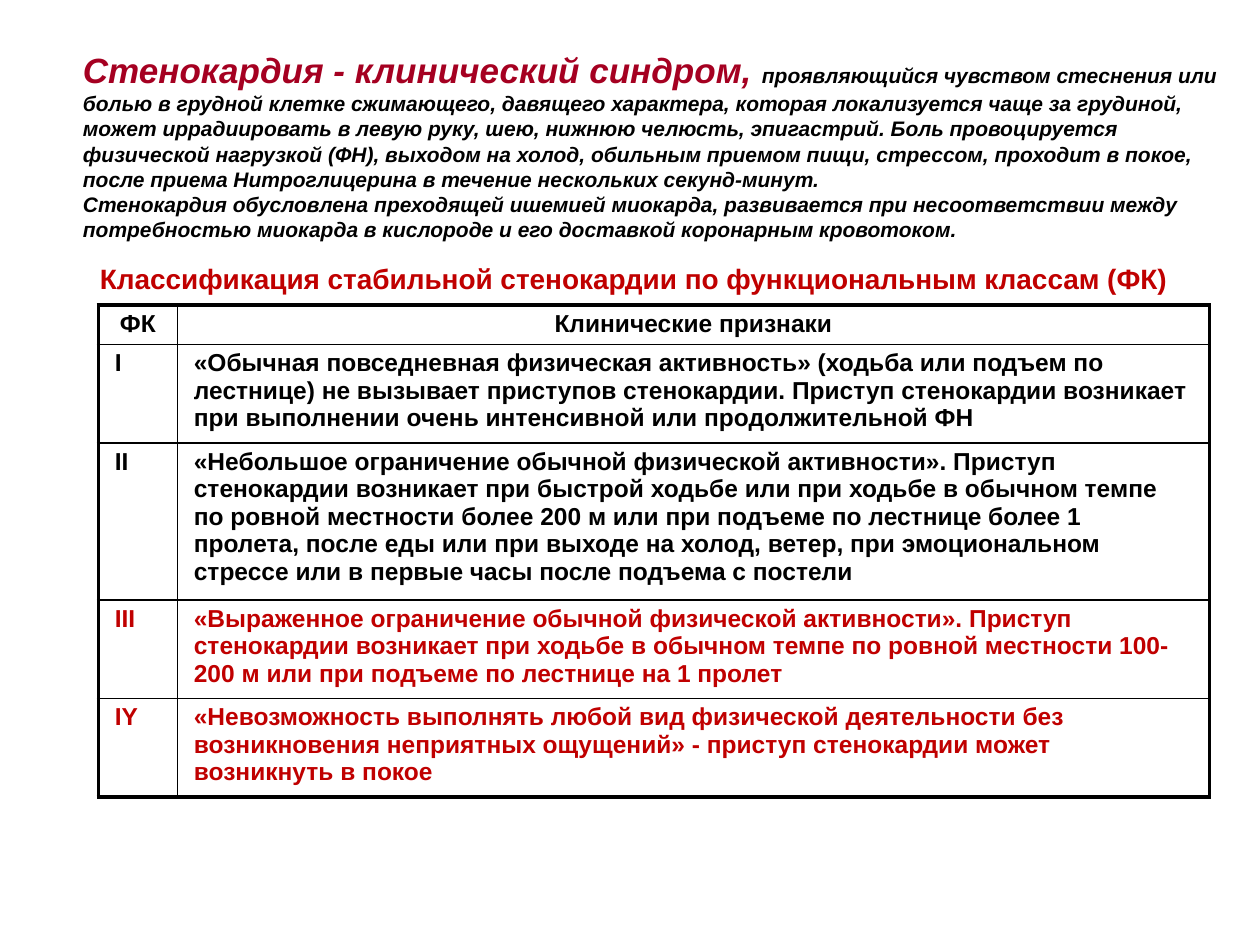
from dataclasses import dataclass

from lxml.etree import SubElement
from pptx import Presentation
from pptx.dml.color import RGBColor
from pptx.enum.text import MSO_ANCHOR as ANCHOR, PP_ALIGN as ALIGN
from pptx.oxml.ns import qn
from pptx.util import Pt

BLACK, RED, CRIMSON, WHITE = "000000", "C00000", "A50021", "FFFFFF"


@dataclass
class Row:
    """One row of the classification table."""
    label: str
    signs: str
    height: float
    color: str = BLACK
    align: ALIGN = ALIGN.LEFT


ROWS = [
    Row("ФК", "Клинические признаки", 22.3, align=ALIGN.CENTER),
    Row("I", "«Обычная повседневная физическая активность» (ходьба или подъем по лестнице) "
        "не вызывает приступов стенокардии. Приступ стенокардии возникает при выполнении "
        "очень интенсивной или продолжительной ФН", 56),
    Row("II", "«Небольшое ограничение обычной физической активности». Приступ стенокардии "
        "возникает при быстрой ходьбе или при ходьбе в обычном темпе по ровной местности "
        "более 200 м или при подъеме по лестнице более 1 пролета, после еды или при выходе "
        "на холод, ветер, при эмоциональном стрессе или в первые часы после подъема с постели", 89.4),
    Row("III", "«Выраженное ограничение обычной физической активности». Приступ стенокардии "
        "возникает при ходьбе в обычном темпе по ровной местности 100-200 м или при подъеме "
        "по лестнице на 1 пролет", 55.7, RED),
    Row("IY", "«Невозможность выполнять любой вид физической деятельности без возникновения "
        "неприятных ощущений» - приступ стенокардии может возникнуть в покое", 56, RED),
]
COLS = [45.2, 589.8]


def rgb(color: str) -> RGBColor:
    """Turn a hex string into a colour."""
    return RGBColor.from_string(color)


def add_run(p, text: str, size: float, color: str, italic: bool = False) -> None:
    """Append a bold Arial run."""
    r = p.add_run()
    r.text = text
    f = r.font
    f.name, f.size, f.bold, f.italic = "Arial", Pt(size), True, italic
    f.color.rgb = rgb(color)


def add_box(s, left: float, top: float, width: float, height: float, anchor: ANCHOR):
    """Add a wrapping text box and return its first paragraph."""
    tf = s.shapes.add_textbox(Pt(left), Pt(top), Pt(width), Pt(height)).text_frame
    tf.word_wrap, tf.vertical_anchor = True, anchor
    return tf.paragraphs[0]


def set_borders(cell, widths: dict[str, float]) -> None:
    """Draw solid black cell borders, placed ahead of the fill."""
    tc_pr = cell._tc.get_or_add_tcPr()
    for i, (side, width) in enumerate(widths.items()):
        ln = SubElement(tc_pr, qn(f"a:ln{side}"), w=str(Pt(width)))
        fill = SubElement(ln, qn("a:solidFill"))
        SubElement(fill, qn("a:srgbClr"), val=BLACK)
        tc_pr.insert(i, ln)


def add_table(s, left: float, top: float) -> None:
    """Build the table with a heavy outer frame."""
    n, m = len(ROWS), len(COLS)
    table = s.shapes.add_table(n, m, Pt(left), Pt(top), Pt(sum(COLS)),
                               Pt(sum(row.height for row in ROWS))).table
    for j, width in enumerate(COLS):
        table.columns[j].width = Pt(width)
    for i, row in enumerate(ROWS):
        table.rows[i].height = Pt(row.height)
        for j, text in enumerate((row.label, row.signs)):
            cell = table.cell(i, j)
            cell.margin_left = cell.margin_right = Pt(9.4)
            cell.margin_top = cell.margin_bottom = Pt(2.9)
            cell.fill.solid()
            cell.fill.fore_color.rgb = rgb(WHITE)
            outer = {"L": j == 0, "R": j == m - 1, "T": i == 0, "B": i == n - 1}
            set_borders(cell, {side: 2.25 if edge else 1 for side, edge in outer.items()})
            p = cell.text_frame.paragraphs[0]
            p.alignment = row.align
            add_run(p, text, 14, row.color)


def main() -> None:
    """Build and save the slide."""
    prs = Presentation()
    prs.slide_width, prs.slide_height = Pt(720), Pt(540)
    s = prs.slides.add_slide(prs.slide_layouts[6])

    p = add_box(s, 40.3, 19.4, 668.9, 127.4, ANCHOR.MIDDLE)
    add_run(p, "Стенокардия - клинический синдром, ", 20, CRIMSON, True)
    add_run(p, "проявляющийся чувством стеснения или болью в грудной клетке сжимающего, "
            "давящего характера, которая локализуется чаще за грудиной, может иррадиировать "
            "в левую руку, шею, нижнюю челюсть, эпигастрий. Боль провоцируется физической "
            "нагрузкой (ФН), выходом на холод, обильным приемом пищи, стрессом, проходит "
            "в покое, после приема Нитроглицерина в течение нескольких секунд-минут.",
            12, BLACK, True)
    p.add_line_break()
    add_run(p, "Стенокардия обусловлена преходящей ишемией миокарда, развивается при "
            "несоответствии между потребностью миокарда в кислороде и его доставкой "
            "коронарным кровотоком.", 12, BLACK, True)

    p = add_box(s, 22.3, 146.2, 679.7, 26.6, ANCHOR.TOP)
    p.alignment = ALIGN.CENTER
    add_run(p, "Классификация стабильной стенокардии по функциональным классам (ФК)", 16, RED)

    add_table(s, 56.2, 174.2)
    prs.save("out.pptx")


if __name__ == "__main__":
    main()
